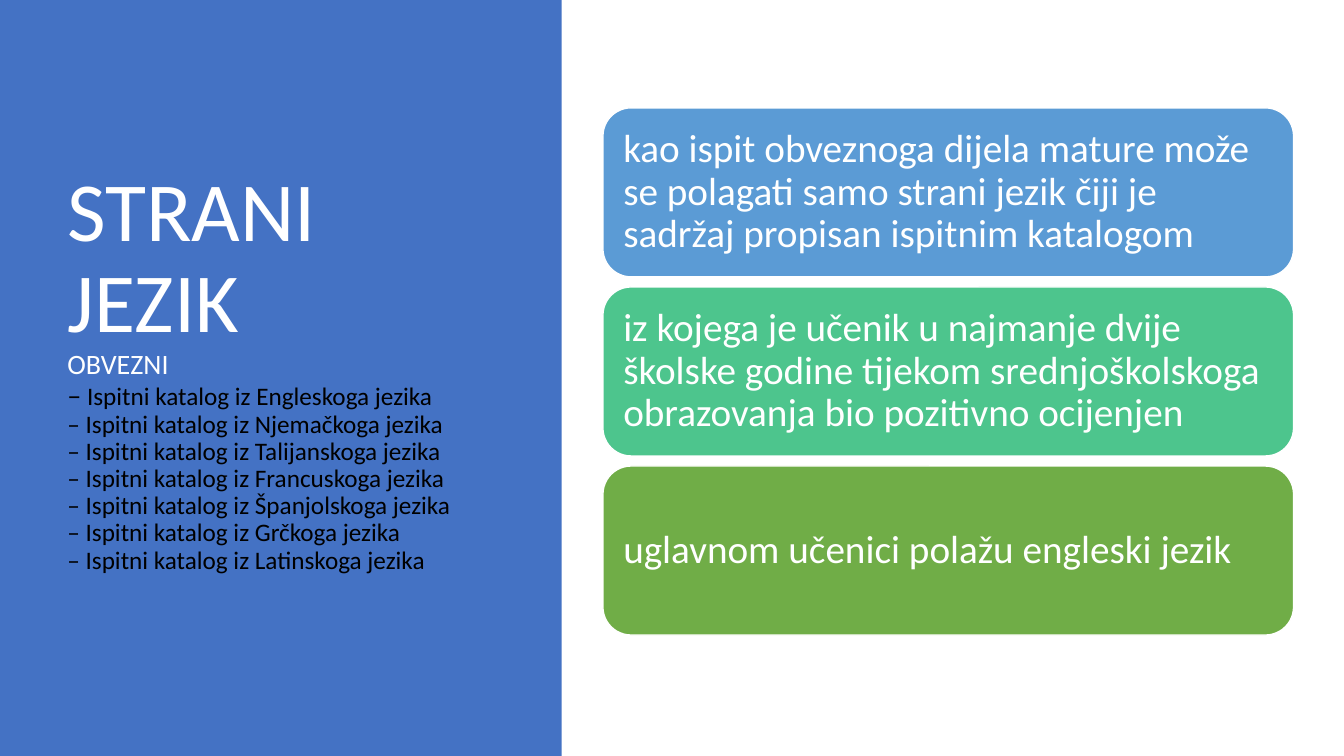
from pptx import Presentation
from pptx import util as u
from pptx.dml.color import RGBColor
from pptx.enum import shapes, text

PX = 9144
FONT = "Calibri"
WHITE = "FFFFFF"
BLACK = "000000"
TONGUES = ["Engleskoga", "Njemačkoga", "Talijanskoga", "Francuskoga",
           "Španjolskoga", "Grčkoga", "Latinskoga"]
CARDS = [
    ("5B9BD5", "kao ispit obveznoga dijela mature može se polagati samo strani jezik čiji je sadržaj propisan ispitnim katalogom"),
    ("4DC58D", "iz kojega je učenik u najmanje dvije školske godine tijekom srednjoškolskoga obrazovanja bio pozitivno ocijenjen"),
    ("70AD47", "uglavnom učenici polažu engleski jezik"),
]


def px(n):
    return u.Emu(round(n * PX))


def color(code):
    return RGBColor.from_string(code)


def add_run(para, words, size, code):
    run = para.add_run()
    run.text = words
    run.font.name = FONT
    run.font.size = u.Pt(size)
    run.font.color.rgb = color(code)


def add_box(slide, kind, box, fill):
    shape = slide.shapes.add_shape(kind, *map(px, box))
    shape.shadow.inherit = False
    shape.fill.solid()
    shape.fill.fore_color.rgb = color(fill)
    shape.line.fill.background()
    return shape


def set_frame(shape, side, top):
    frame = shape.text_frame
    frame.word_wrap = True
    frame.vertical_anchor = text.MSO_ANCHOR.MIDDLE
    frame.margin_left = frame.margin_right = px(side)
    frame.margin_top = frame.margin_bottom = px(top)
    para = frame.paragraphs[0]
    para.alignment = text.PP_ALIGN.LEFT
    para.line_spacing = 0.9
    return para


def add_panel(slide, box):
    left, top, width, height = box
    add_box(slide, shapes.MSO_SHAPE.RECTANGLE, box, "4472C4")
    area = (left + 57, top + 68, width - 141, height - 148)
    title = slide.shapes.add_textbox(*map(px, area))
    para = set_frame(title, 10, 5)
    for words, size in [("STRANI ", 60), ("JEZIK", 60), ("OBVEZNI", 20)]:
        add_run(para, words, size, WHITE)
        para.add_line_break()
    for i, tongue in enumerate(TONGUES):
        if i:
            para.add_line_break()
        add_run(para, "–", 18 if i else 20, BLACK)
        add_run(para, f" Ispitni katalog iz {tongue} jezika", 18, BLACK)


def add_cards(slide, box, gap):
    left, top, width, height = box
    tall = (height - gap * (len(CARDS) - 1)) / len(CARDS)
    for i, (fill, words) in enumerate(CARDS):
        place = (left, top + i * (tall + gap), width, tall)
        card = add_box(slide, shapes.MSO_SHAPE.ROUNDED_RECTANGLE, place, fill)
        card.line.color.rgb = color(WHITE)
        card.line.width = u.Pt(1)
        para = set_frame(card, 12, 12)
        add_run(para, words, 28, WHITE)


def main():
    deck = Presentation()
    deck.slide_width, deck.slide_height = px(1333), px(750)
    slide = deck.slides.add_slide(deck.slide_layouts[6])
    add_panel(slide, (0, 0, 557, 750))
    add_cards(slide, (598, 107, 685, 523), 10)
    deck.save("out.pptx")


if __name__ == "__main__":
    main()
